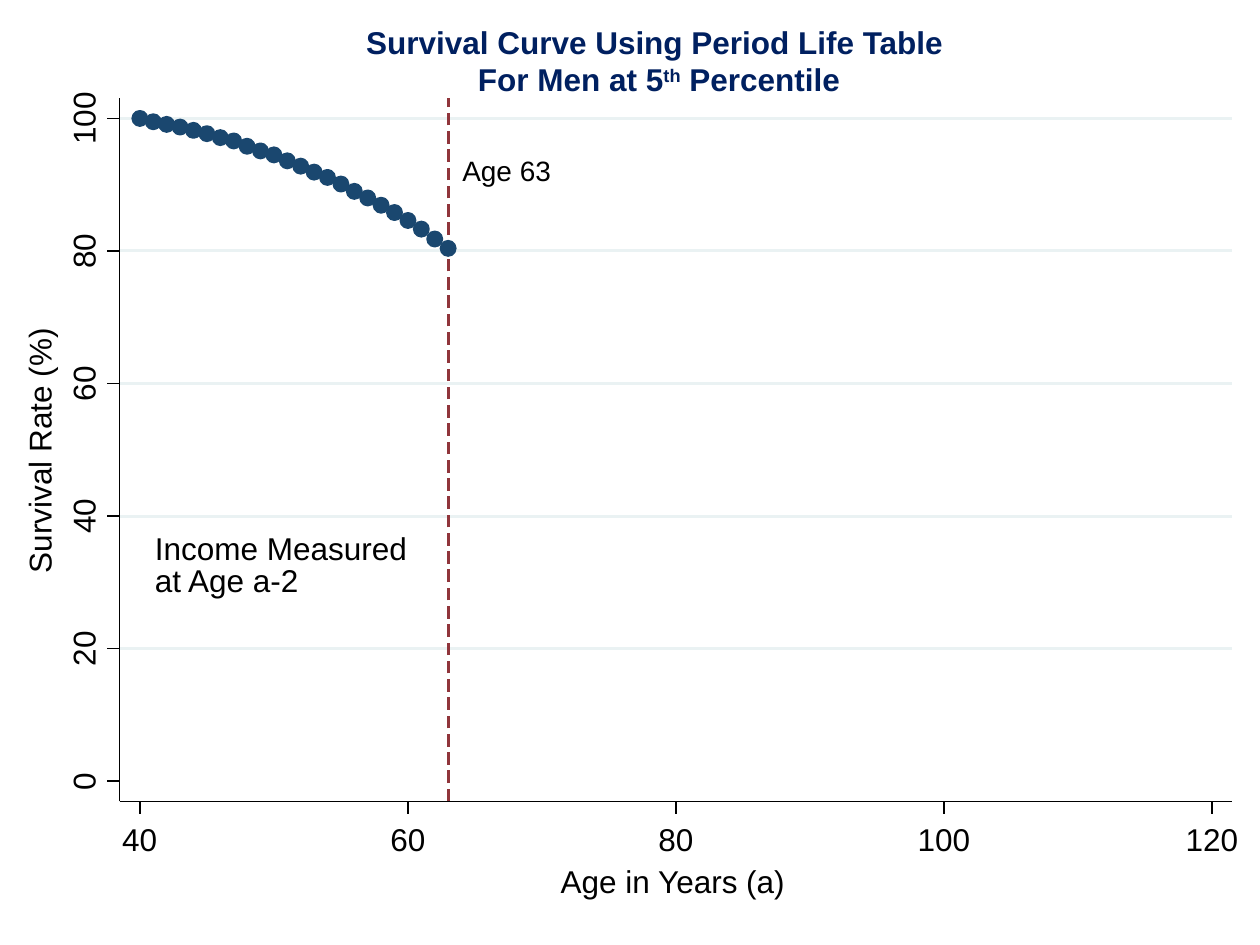
from pptx import Presentation
from pptx.dml.color import RGBColor
from pptx.enum.shapes import MSO_CONNECTOR, MSO_SHAPE
from pptx.enum.text import MSO_AUTO_SIZE, PP_ALIGN
from pptx.oxml.ns import qn
from pptx.util import Inches, Pt
from lxml import etree

STRAIGHT = MSO_CONNECTOR.STRAIGHT
RECT, OVAL = MSO_SHAPE.RECTANGLE, MSO_SHAPE.OVAL
CENTER = PP_ALIGN.CENTER
GROW = MSO_AUTO_SIZE.SHAPE_TO_FIT_TEXT

WHITE = RGBColor(0xFF, 0xFF, 0xFF)
BLACK = RGBColor(0, 0, 0)
NAVY = RGBColor(0x00, 0x20, 0x60)
BLUE = RGBColor(0x1A, 0x47, 0x6F)
RED = RGBColor(0x90, 0x35, 0x3B)
PALE = RGBColor(0xEA, 0xF2, 0xF3)

THIN, THICK = 0.88, 1.75
LEFT, RIGHT, TOP, BASE = 0.95, 9.78, 0.78, 6.36
TICK, DOT, DIGIT, ROW = 0.1, 0.11, 0.14, 0.36
DASH, STEP = 0.1, 0.145
RETIRE = 63

# Survival in percent, one value a year from age 40
RATES = [100, 99.5, 99.1, 98.7, 98.2, 97.7, 97.1, 96.6,
         95.8, 95.1, 94.5, 93.6, 92.8, 91.9, 91.1, 90.1,
         89, 88, 86.9, 85.8, 84.6, 83.3, 81.8, 80.4]


def age_x(age):
    return 1.11 + (age - 40) * (9.62 - 1.11) / 80


def rate_y(rate):
    return 6.2 - rate * (6.2 - 0.94) / 100


class Board:
    def __init__(self, slide, font="Arial"):
        self.slide = slide
        self.font = font
        self.plot = slide.shapes.add_group_shape().shapes

    def run(self, para, words, size, color, bold=False, base=0):
        """Add one run; base is the rise of the text in percent."""
        run = para.add_run()
        run.text = words
        font = run.font
        font.name, font.size, font.bold = self.font, Pt(size), bold
        font.color.rgb = color
        if base:
            run._r.get_or_add_rPr().set("baseline", str(base * 1000))

    def title(self, x, y, w, h, lines):
        frame = self.slide.shapes.add_textbox(
            Inches(x), Inches(y), Inches(w), Inches(h)).text_frame
        frame.word_wrap = True
        frame.auto_size = GROW
        for i, line in enumerate(lines):
            para = frame.add_paragraph() if i else frame.paragraphs[0]
            para.alignment = CENTER
            for words, base in line:
                self.run(para, words, 18, NAVY, True, base)

    def label(self, words, x, y, w, h=ROW, size=18, turn=False):
        """Write from the point x, y; a turned label runs upward from it."""
        if turn:
            x, y = x + (h - w) / 2, y - (w + h) / 2
        box = self.plot.add_textbox(
            Inches(x), Inches(y), Inches(w), Inches(h))
        box.rotation = 270 if turn else 0
        frame = box.text_frame
        frame.margin_left = frame.margin_right = 0
        frame.margin_top = frame.margin_bottom = 0
        frame.word_wrap = False
        frame.auto_size = GROW
        self.run(frame.paragraphs[0], words, size, BLACK)

    def line(self, x1, y1, x2, y2, color=BLACK, width=THIN):
        line = self.plot.add_connector(
            STRAIGHT, Inches(x1), Inches(y1), Inches(x2), Inches(y2))
        line.line.color.rgb = color
        line.line.width = Pt(width)
        etree.SubElement(line._element.spPr, qn("a:effectLst"))

    def shape(self, kind, x, y, w, h, color, width):
        shape = self.plot.add_shape(
            kind, Inches(x), Inches(y), Inches(w), Inches(h))
        shape.shadow.inherit = False
        shape.fill.solid()
        shape.fill.fore_color.rgb = color
        shape.line.color.rgb = color
        shape.line.width = Pt(width)


def main():
    deck = Presentation()
    deck.slide_width, deck.slide_height = Inches(10), Inches(7.5)
    board = Board(deck.slides.add_slide(deck.slide_layouts[6]))

    board.title(0.72, 0.13, 9.02, 0.71, [
        [("Survival Curve Using Period Life Table ", 0)],
        [("For Men at 5", 0), ("th", 30), (" Percentile", 0)]])

    board.shape(RECT, LEFT, TOP, RIGHT - LEFT, BASE - TOP, WHITE, THIN)
    for rate in range(20, 101, 20):
        board.line(LEFT, rate_y(rate), RIGHT, rate_y(rate), PALE, THICK)

    x = age_x(RETIRE)
    for i in range(39):
        y = BASE - i * STEP
        board.line(x, y, x, max(y - DASH, TOP), RED, THICK)

    for age, rate in enumerate(RATES, 40):
        board.shape(OVAL, age_x(age) - DOT / 2, rate_y(rate) - DOT / 2,
                    DOT, DOT, BLUE, THICK)

    board.label("Age 63", 3.67, 1.22, 0.73, 0.28, 16)
    board.label("Income Measured", 1.23, 4.2, 2.24)
    board.label("at Age a-2", 1.23, 4.45, 1.33)

    board.line(LEFT, BASE, LEFT, TOP)
    for rate in range(0, 101, 20):
        y, wide = rate_y(rate), DIGIT * len(str(rate))
        board.line(LEFT, y, LEFT - TICK, y)
        board.label(str(rate), 0.51, y + wide / 2, wide + 0.13, turn=True)
    board.label("Survival Rate (%)", 0.16, 4.55, 2.19, turn=True)

    board.line(LEFT, BASE, RIGHT, BASE)
    for age in range(40, 121, 20):
        x, wide = age_x(age), DIGIT * len(str(age))
        board.line(x, BASE, x, BASE + TICK)
        board.label(str(age), x - wide / 2, 6.51, wide + 0.13)
    board.label("Age in Years (a)", 4.45, 6.84, 2.02)

    deck.save("out.pptx")


if __name__ == "__main__":
    main()
